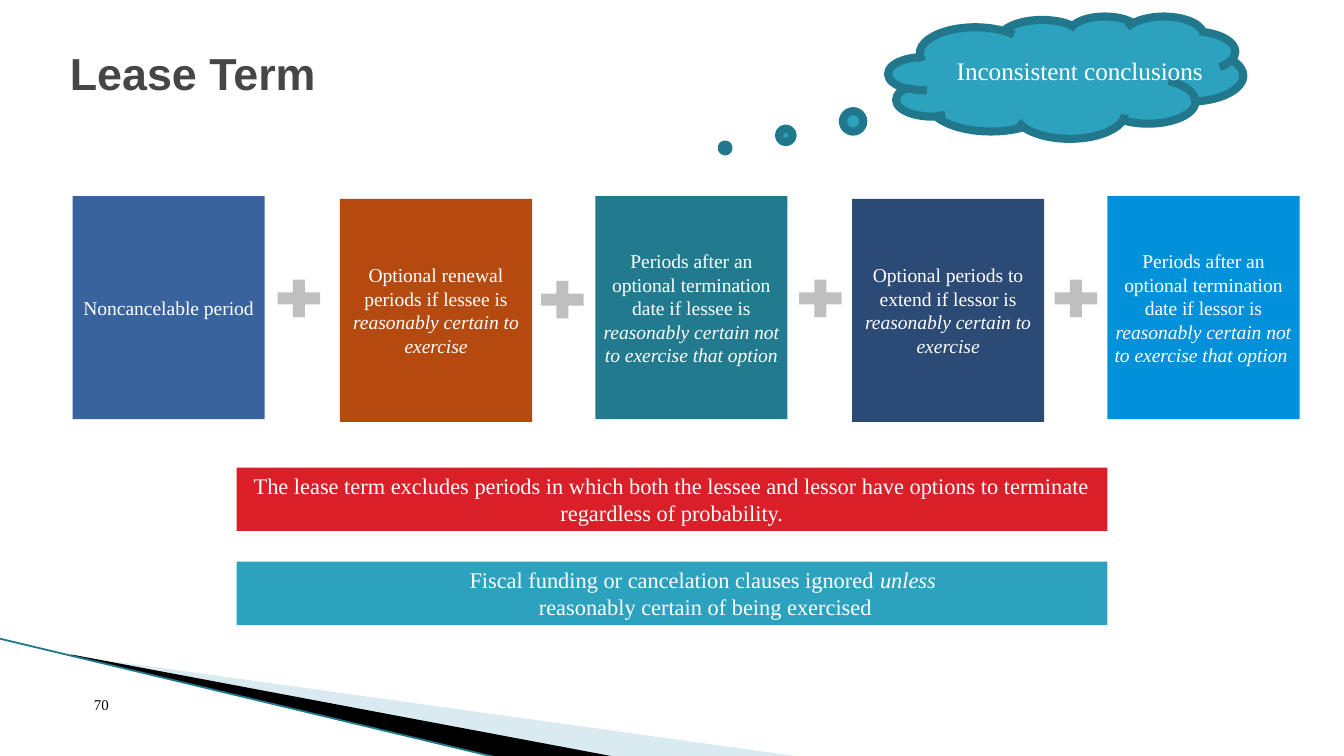
import pptx
import pptx.util
import pptx.dml.color
import pptx.enum.shapes
import pptx.enum.text
import pptx.oxml.xmlchemy

Inches = pptx.util.Inches
Kind = pptx.enum.shapes.MSO_SHAPE
Align = pptx.enum.text.PP_ALIGN
Anchor = pptx.enum.text.MSO_ANCHOR
Element = pptx.oxml.xmlchemy.OxmlElement
SERIF = "Times New Roman"

# Content: each paragraph is a list of (text, italic) runs
TITLE = "Lease Term"
THOUGHT = "Inconsistent conclusions"
NUMBER = "70"
CARDS = [  # left, top, fill, runs
    (0.54, 1.46, "39639D", [("Noncancelable period", False)]),
    (2.53, 1.48, "B54A10", [("Optional renewal periods if lessee is ", False),
                            ("reasonably certain to exercise", True)]),
    (4.43, 1.46, "227A8F", [("Periods after an optional termination date if lessee is ", False),
                            ("reasonably certain not to exercise that option", True)]),
    (6.34, 1.48, "2B4A76", [("Optional periods to extend if lessor is ", False),
                            ("reasonably certain to exercise", True)]),
    (8.24, 1.46, "0091DA", [("Periods after an optional termination date if lessor is ", False),
                            ("reasonably certain not to exercise that option ", True)]),
]
PLUSES = [(2.01, 2.03), (3.97, 2.04), (5.89, 2.03), (7.79, 2.03)]
BARS = [  # top, fill, inset, level, paragraphs
    (3.48, "DA1F28", 0.03, 0,
     [[("The lease term excludes periods in which both the lessee and lessor "
        "have options to terminate regardless of probability.", False)]]),
    (4.18, "2DA2BF", 0.04, 1,
     [[("Fiscal funding or cancelation clauses ignored ", False), ("unless ", True)],
      [("reasonably certain of being exercised", False)]]),
]
WEDGES = [  # fill, opacity in percent, corners
    ("A0CBDC", 40, [(0.55, 4.88), (5.95, 5.63), (4.56, 5.63)]),
    ("000000", 100, [(0.53, 4.87), (4.57, 5.63), (3.72, 5.64), (0.54, 4.88)]),
]


def rgb(code):
    return pptx.dml.color.RGBColor.from_string(code)


def paint(shape, code):
    shape.shadow.inherit = False
    shape.fill.solid()
    shape.fill.fore_color.rgb = rgb(code)
    shape.line.fill.background()


def style(font, size, code, name=SERIF):
    font.name, font.size = name, pptx.util.Pt(size)
    font.color.rgb = rgb(code)


def add_shape(kind, box, code):
    shape = slide.shapes.add_shape(kind, *map(Inches, box))
    paint(shape, code)
    return shape


def add_block(box, code, paras, size, inset=0.03, level=0):
    frame = add_shape(Kind.RECTANGLE, box, code).text_frame
    frame.word_wrap = True
    frame.vertical_anchor = Anchor.MIDDLE
    frame.margin_left = frame.margin_right = Inches(inset)
    frame.margin_top = frame.margin_bottom = Inches(inset)
    for i, runs in enumerate(paras):
        para = frame.add_paragraph() if i else frame.paragraphs[0]
        para.alignment, para.level = Align.CENTER, level
        para._p.get_or_add_pPr().set("marL", str(Inches(0.5 * level)))
        style(para.font, size, "FFFFFF")
        for text, slant in runs:
            run = para.add_run()
            run.text = text
            if slant:
                run.font.italic = True


def add_label(box, text, size, code):
    frame = slide.shapes.add_textbox(*map(Inches, box)).text_frame
    frame.word_wrap = True
    para = frame.paragraphs[0]
    para.text = text
    style(para.font, size, code)


# Wide 16:9 slide
deck = pptx.Presentation()
deck.slide_width, deck.slide_height = Inches(10), Inches(10 * 9 / 16)
slide = deck.slides.add_slide(deck.slide_layouts[5])

# Corner wedges and line
for code, alpha, points in WEDGES:
    start, *rest = [(Inches(x), Inches(y)) for x, y in points]
    pen = slide.shapes.build_freeform(*start)
    pen.add_line_segments(rest)
    wedge = pen.convert_to_shape()
    paint(wedge, code)
    if alpha < 100:
        mark = Element("a:alpha")
        mark.set("val", str(alpha * 1000))
        wedge.fill._xPr.solidFill.srgbClr.append(mark)

edge = slide.shapes.add_connector(
    pptx.enum.shapes.MSO_CONNECTOR.STRAIGHT,
    Inches(-0.01), Inches(4.75), Inches(3.71), Inches(5.64))
edge.line.color.rgb = rgb("21788D")
edge.line.width = pptx.util.Pt(0.95)
edge._element.spPr.append(Element("a:effectLst"))

# Title
title = slide.shapes.title
title.left, title.top, title.width, title.height = map(Inches, (0.42, 0.24, 8.97, 0.65))
title.text_frame.auto_size = pptx.enum.text.MSO_AUTO_SIZE.NONE
title.text_frame.vertical_anchor = Anchor.MIDDLE
head = title.text_frame.paragraphs[0]
head.text = TITLE
head.alignment, head.line_spacing = Align.LEFT, 0.9
style(head.font, 24, "464646", "Arial")
head.font.bold = True

# Cards joined by plus signs
for left, top, code, runs in CARDS:
    add_block((left, top, 1.43, 1.66), code, [runs], 10.5)
for left, top in PLUSES:
    add_shape(Kind.MATH_PLUS, (left, top, 0.43, 0.38), "BFBFBF")

# Rule bars
for top, code, inset, level, paras in BARS:
    add_block((1.76, top, 6.48, 0.47), code, paras, 12, inset, level)

# Slide number
add_label((0.6, 5.13, 0.33, 0.3), NUMBER, 8, "000000")

# Thought cloud
cloud = add_shape(Kind.CLOUD_CALLOUT, (6.61, 0.12, 2.64, 0.91), "2DA2BF")
cloud.adjustments[0], cloud.adjustments[1] = -0.96, 0.578
cloud.line.color.rgb = rgb("21788D")
cloud.line.width = pptx.util.Pt(4.33)
add_label((7.02, 0.36, 2.21, 0.33), THOUGHT, 13.5, "FFFFFF")

deck.save("out.pptx")
